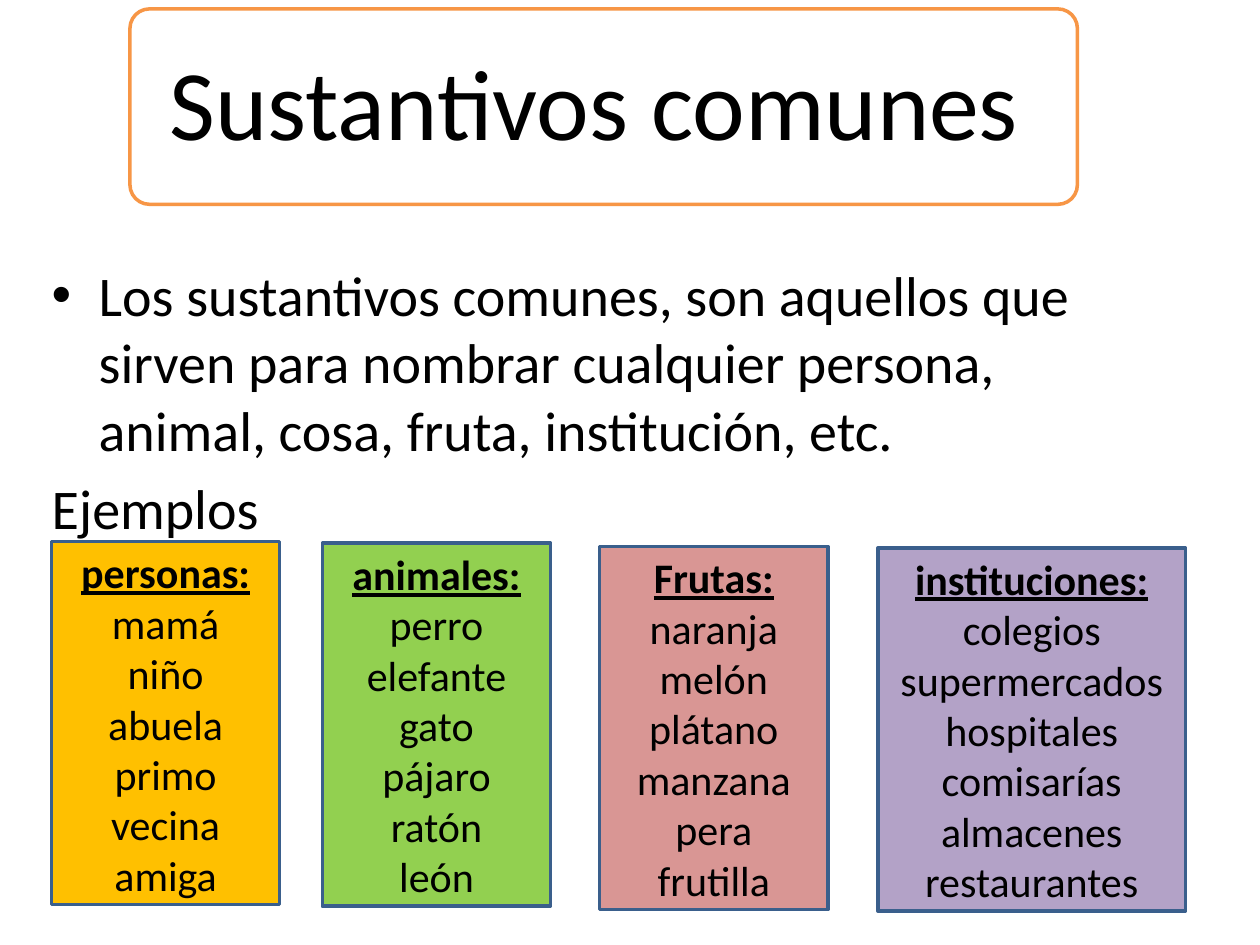
import pptx
import pptx.util
import pptx.dml.color
import pptx.enum.shapes
import pptx.enum.text
import pptx.oxml.ns
import lxml.etree

Cm = pptx.util.Cm
Pt = pptx.util.Pt
RGBColor = pptx.dml.color.RGBColor
ALIGN = pptx.enum.text.PP_ALIGN
ANCHOR = pptx.enum.text.MSO_ANCHOR
SHAPE = pptx.enum.shapes.MSO_SHAPE

BLACK = RGBColor(0x00, 0x00, 0x00)
WHITE = RGBColor(0xFF, 0xFF, 0xFF)
ORANGE = RGBColor(0xF7, 0x96, 0x46)
BLUE = RGBColor(0x3A, 0x5F, 0x8C)
AMBER = RGBColor(0xFF, 0xC0, 0x00)
GREEN = RGBColor(0x92, 0xD0, 0x50)
PINK = RGBColor(0xD9, 0x96, 0x94)
PURPLE = RGBColor(0xB3, 0xA2, 0xC7)
FONT = "Calibri"

TITLE = "Sustantivos comunes "
DEFINITION = ("Los sustantivos comunes, son aquellos que sirven para nombrar "
              "cualquier persona, animal, cosa, fruta, institución, etc.")
EXAMPLES_LABEL = "Ejemplos"
CARD_HEIGHT = 7.32
CARDS = [
    (1.04, 10.92, 4.6, AMBER, "personas:",
     ["mamá", "niño", "abuela", "primo", "vecina", "amiga"]),
    (6.5, 10.95, 4.6, GREEN, "animales:",
     ["perro", "elefante", "gato", "pájaro", "ratón", "león"]),
    (12.09, 11.02, 4.6, PINK, "Frutas:",
     ["naranja", "melón", "plátano", "manzana", "pera", "frutilla"]),
    (17.7, 11.05, 6.2, PURPLE, "instituciones:",
     ["colegios", "supermercados", "hospitales", "comisarías", "almacenes", "restaurantes"]),
]


def format_runs(paragraph, size, emphasis=False):
    for run in paragraph.runs:
        run.font.name = FONT
        run.font.size = Pt(size)
        run.font.color.rgb = BLACK
        run.font.bold = emphasis
        run.font.underline = emphasis


def add_box(slide, kind, place, fill, line):
    shape = slide.shapes.add_shape(kind, *[Cm(length) for length in place])
    shape.shadow.inherit = False
    shape.fill.solid()
    shape.fill.fore_color.rgb = fill
    shape.line.color.rgb = line
    shape.line.width = Pt(2)
    return shape


def add_title(slide):
    title = slide.shapes.title
    title.left, title.top, title.width, title.height = Cm(1.7), Cm(0.33), Cm(21), Cm(3.71)
    text_frame = title.text_frame
    text_frame.text = TITLE
    text_frame.word_wrap = True
    text_frame.auto_size = pptx.enum.text.MSO_AUTO_SIZE.NONE
    text_frame.vertical_anchor = ANCHOR.MIDDLE
    text_frame.margin_left = text_frame.margin_right = Cm(0.61)
    text_frame.margin_top = text_frame.margin_bottom = Cm(0.61)
    paragraph = text_frame.paragraphs[0]
    paragraph.alignment = ALIGN.CENTER
    paragraph.line_spacing = 0.9
    format_runs(paragraph, 57)

    frame = add_box(slide, SHAPE.ROUNDED_RECTANGLE, (2.62, 0.18, 19.1, 3.94), WHITE, ORANGE)
    frame.adjustments[0] = 0.1
    title._element.addprevious(frame._element)


def add_definition(slide):
    text_box = slide.shapes.add_textbox(Cm(0.79), Cm(5.13), Cm(22.86), Cm(5.59))
    text_frame = text_box.text_frame
    text_frame.word_wrap = True
    text_frame.text = DEFINITION + "\n" + EXAMPLES_LABEL
    for paragraph in text_frame.paragraphs:
        paragraph.space_before = Pt(6.4)
        format_runs(paragraph, 32)
    properties = text_frame.paragraphs[0]._p.get_or_add_pPr()
    properties.set("marL", str(Cm(0.95)))
    properties.set("indent", str(-Cm(0.95)))
    font = lxml.etree.SubElement(properties, pptx.oxml.ns.qn("a:buFont"))
    font.set("typeface", "Arial")
    bullet = lxml.etree.SubElement(properties, pptx.oxml.ns.qn("a:buChar"))
    bullet.set("char", "•")


def add_card(slide, left, top, width, color, heading, words):
    card = add_box(slide, SHAPE.RECTANGLE, (left, top, width, CARD_HEIGHT), color, BLUE)
    text_frame = card.text_frame
    text_frame.word_wrap = True
    text_frame.vertical_anchor = ANCHOR.MIDDLE
    text_frame.text = "\n".join([heading] + words)
    for index, paragraph in enumerate(text_frame.paragraphs):
        paragraph.alignment = ALIGN.CENTER
        format_runs(paragraph, 24, emphasis=index == 0)


def main():
    presentation = pptx.Presentation()
    presentation.slide_width = Cm(25.4)
    presentation.slide_height = Cm(19.05)
    slide = presentation.slides.add_slide(presentation.slide_layouts[5])
    add_title(slide)
    add_definition(slide)
    for card in CARDS:
        add_card(slide, *card)
    presentation.save("out.pptx")


if __name__ == "__main__":
    main()
